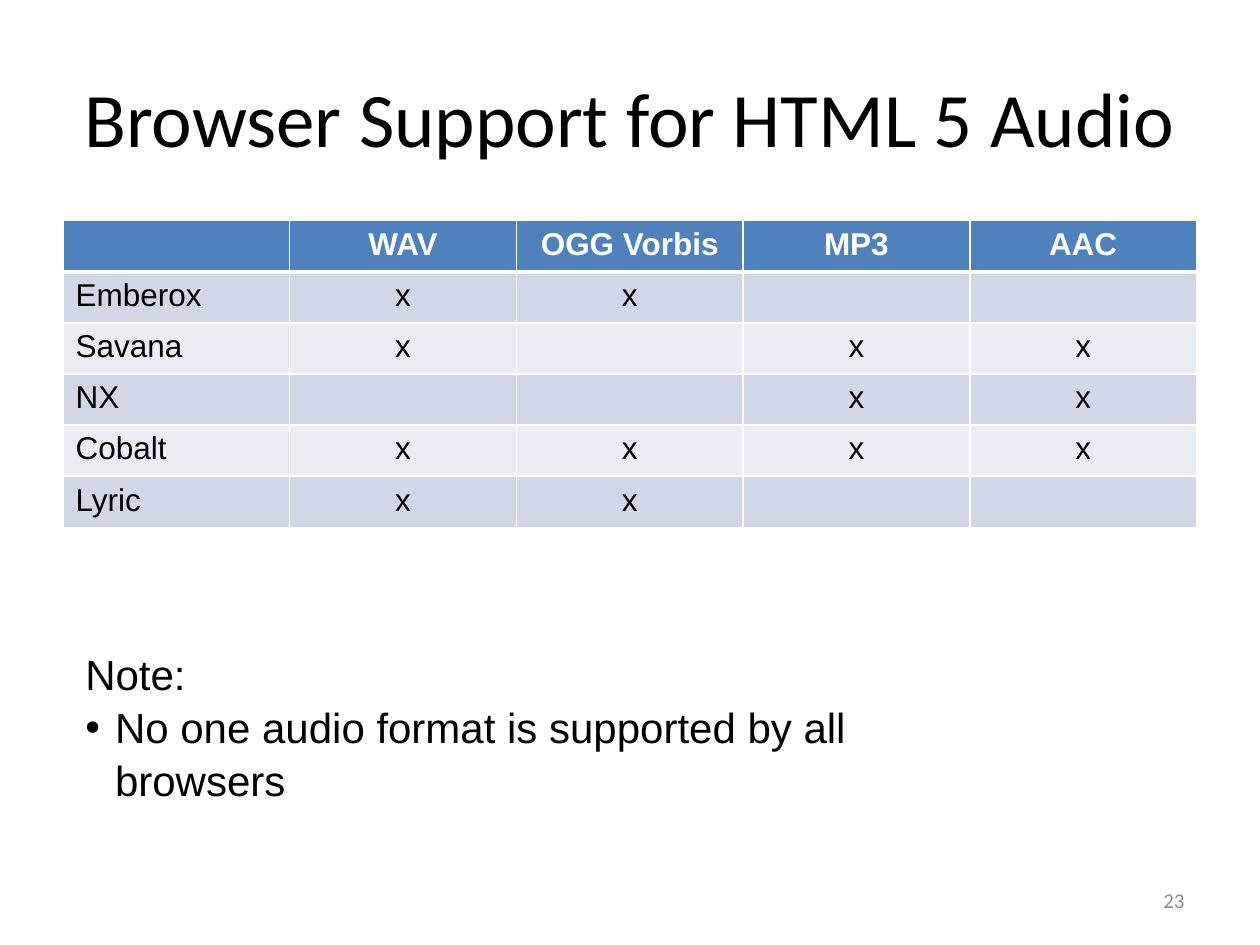
import pptx
import pptx.dml.color
import pptx.enum.text
import pptx.oxml
import pptx.oxml.ns
import pptx.util
from pptx.dml.color import RGBColor
from pptx.enum.text import MSO_ANCHOR, MSO_AUTO_SIZE, PP_ALIGN
from pptx.util import Cm

BLACK = RGBColor(0x00, 0x00, 0x00)
WHITE = RGBColor(0xFF, 0xFF, 0xFF)
GREY = RGBColor(0x8C, 0x8C, 0x8C)
HEADER_BLUE = RGBColor(0x4F, 0x81, 0xBD)
BAND_DARK = RGBColor(0xD0, 0xD8, 0xE8)
BAND_LIGHT = RGBColor(0xE9, 0xED, 0xF4)

FORMATS = ["WAV", "OGG Vorbis", "MP3", "AAC"]
SUPPORT = {
    "Emberox": ["WAV", "OGG Vorbis"],
    "Savana": ["WAV", "MP3", "AAC"],
    "NX": ["MP3", "AAC"],
    "Cobalt": FORMATS,
    "Lyric": ["WAV", "OGG Vorbis"],
}
COLUMN_WIDTH = Cm(4.57)
ROW_HEIGHT = Cm(1.03)


def add_run(paragraph, text, size, font="Arial", color=BLACK, bold=False):
    run = paragraph.add_run()
    run.text = text
    run.font.size = pptx.util.Pt(size)
    run.font.name = font
    run.font.color.rgb = color
    run.font.bold = bold


def add_text_frame(slide, left, top, width, height, anchor=MSO_ANCHOR.TOP):
    frame = slide.shapes.add_textbox(
        Cm(left), Cm(top), Cm(width), Cm(height)).text_frame
    frame.word_wrap = True
    frame.vertical_anchor = anchor
    return frame


def add_title(slide):
    title = add_text_frame(slide, 1.27, 0.76, 22.86, 3.18, MSO_ANCHOR.MIDDLE)
    title.paragraphs[0].alignment = PP_ALIGN.CENTER
    add_run(title.paragraphs[0], "Browser Support for HTML 5 Audio", 44, "Calibri")


def set_borders(cell, bottom_width):
    """Draw white cell borders, 1 pt wide except at the bottom."""
    properties = cell._tc.get_or_add_tcPr()
    widths = {"lnL": 1, "lnR": 1, "lnT": 1, "lnB": bottom_width}
    for position, (side, width) in enumerate(widths.items()):
        border = pptx.oxml.parse_xml(
            f'<a:{side} {pptx.oxml.ns.nsdecls("a")} w="{pptx.util.Pt(width)}">'
            f'<a:solidFill><a:srgbClr val="{WHITE}"/></a:solidFill></a:{side}>')
        properties.insert(position, border)


def add_support_table(slide):
    rows = [["", *FORMATS]]
    for browser, supported in SUPPORT.items():
        rows.append([browser, *("x" if name in supported else "" for name in FORMATS)])
    table = slide.shapes.add_table(
        len(rows), len(rows[0]), Cm(1.27), Cm(4.45),
        COLUMN_WIDTH * len(rows[0]), ROW_HEIGHT * len(rows)).table
    for column in table.columns:
        column.width = COLUMN_WIDTH
    for row_index, texts in enumerate(rows):
        table.rows[row_index].height = ROW_HEIGHT
        is_header = row_index == 0
        band = BAND_DARK if row_index % 2 else BAND_LIGHT
        for column_index, text in enumerate(texts):
            cell = table.cell(row_index, column_index)
            cell.fill.solid()
            cell.fill.fore_color.rgb = HEADER_BLUE if is_header else band
            set_borders(cell, 3 if is_header else 1)
            paragraph = cell.text_frame.paragraphs[0]
            paragraph.alignment = PP_ALIGN.CENTER if column_index else PP_ALIGN.LEFT
            if text:
                add_run(paragraph, text, 18,
                        color=WHITE if is_header else BLACK, bold=is_header)


def add_bullet(paragraph, indent):
    properties = paragraph._p.get_or_add_pPr()
    properties.set("marL", str(indent))
    properties.set("indent", str(-indent))
    for xml in ('<a:buFont {} typeface="Arial"/>', '<a:buChar {} char="•"/>'):
        properties.append(pptx.oxml.parse_xml(xml.format(pptx.oxml.ns.nsdecls("a"))))


def add_note(slide):
    note = add_text_frame(slide, 1.47, 12.9, 19.41, 2.31)
    note.auto_size = MSO_AUTO_SIZE.SHAPE_TO_FIT_TEXT
    heading, remark = note.paragraphs[0], note.add_paragraph()
    for paragraph in (heading, remark):
        paragraph.line_spacing = 1.05
    add_run(heading, "Note:", 24)
    add_bullet(remark, Cm(0.6))
    add_run(remark, "No one audio format is supported by all browsers", 24)


def add_page_number(slide):
    number = add_text_frame(slide, 18.2, 17.65, 5.93, 1.01, MSO_ANCHOR.MIDDLE)
    number.paragraphs[0].alignment = PP_ALIGN.RIGHT
    add_run(number.paragraphs[0], "23", 12, "Calibri", GREY)


def main():
    presentation = pptx.Presentation()
    presentation.slide_width = Cm(25.4)
    presentation.slide_height = Cm(19.05)
    slide = presentation.slides.add_slide(presentation.slide_layouts[6])
    add_title(slide)
    add_support_table(slide)
    add_page_number(slide)
    add_note(slide)
    presentation.save("out.pptx")


if __name__ == "__main__":
    main()
